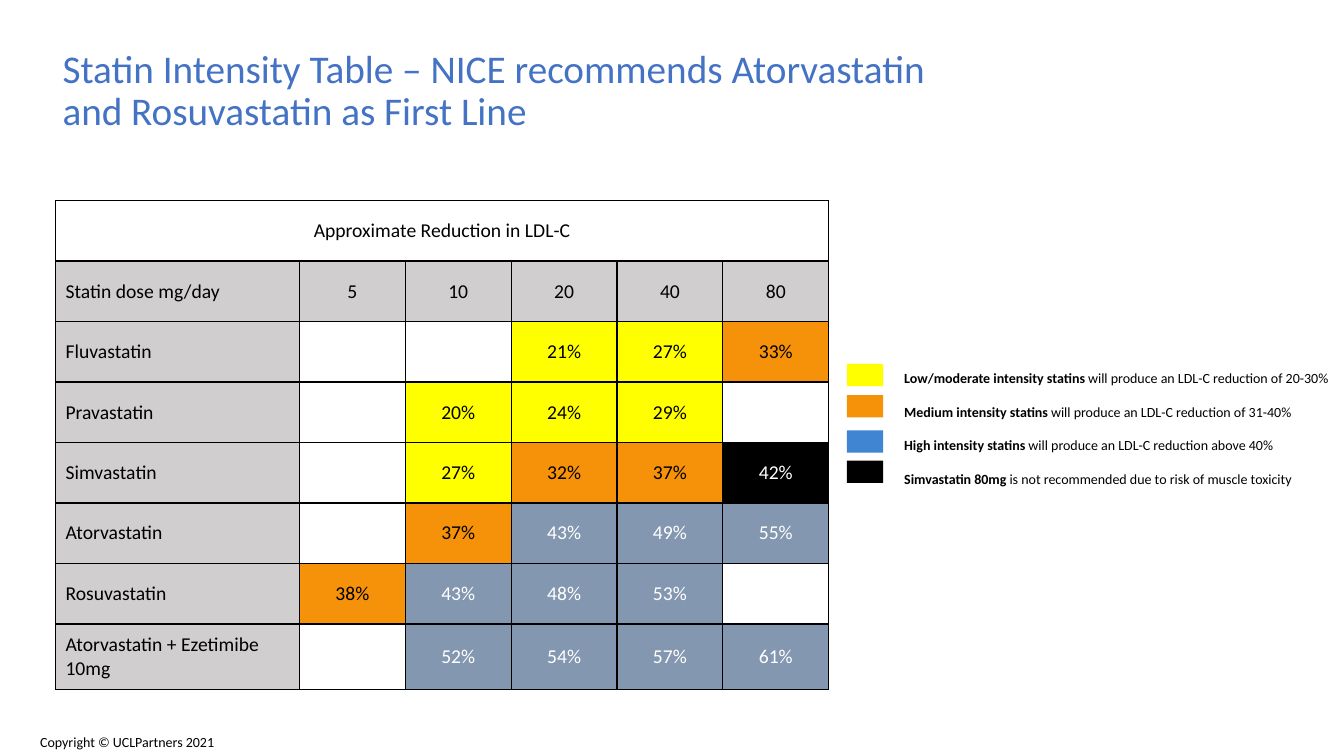
from lxml.etree import SubElement
from pptx import Presentation
from pptx.dml.color import RGBColor
from pptx.enum.shapes import MSO_SHAPE
from pptx.enum.text import MSO_ANCHOR as ANCHOR, MSO_AUTO_SIZE as AUTO, PP_ALIGN as ALIGN
from pptx.oxml import parse_xml
from pptx.oxml.ns import nsdecls
from pptx.util import Inches, Pt

BLACK = RGBColor(0x00, 0x00, 0x00)
WHITE = RGBColor(0xFF, 0xFF, 0xFF)
TITLE_BLUE = RGBColor(0x44, 0x72, 0xC4)
GREY = RGBColor(0xD0, 0xCE, 0xCE)
YELLOW = RGBColor(0xFF, 0xFF, 0x00)
ORANGE = RGBColor(0xF6, 0x91, 0x0A)
SLATE = RGBColor(0x84, 0x97, 0xB0)
KEY_BLUE = RGBColor(0x3F, 0x85, 0xD2)

DOSES = ["5", "10", "20", "40", "80"]
REDUCTIONS = {
    "Fluvastatin": [None, None, 21, 27, 33],
    "Pravastatin": [None, 20, 24, 29, None],
    "Simvastatin": [None, 27, 32, 37, 42],
    "Atorvastatin": [None, 37, 43, 49, 55],
    "Rosuvastatin": [38, 43, 48, 53, None],
    "Atorvastatin + Ezetimibe 10mg": [None, 52, 54, 57, 61],
}
KEY = [
    (3.61, YELLOW, "Low/moderate intensity statins ",
     "will produce an LDL-C reduction of 20-30%"),
    (3.92, ORANGE, "Medium intensity statins ",
     "will produce an LDL-C reduction of 31-40%"),
    (4.27, KEY_BLUE, "High intensity statins ",
     "will produce an LDL-C reduction above 40%"),
    (4.57, BLACK, "Simvastatin 80mg ",
     "is not recommended due to risk of muscle toxicity"),
]


def intensity_colours(statin, dose, value):
    if (statin, dose) == ("Simvastatin", "80"):
        return BLACK, WHITE
    if value <= 30:
        return YELLOW, BLACK
    if value <= 40:
        return ORANGE, BLACK
    return SLATE, WHITE


class SlideBuilder:
    """Holds the text style and the current slide, and adds elements to it."""

    def __init__(self, slide, font="Calibri"):
        self.slide = slide
        self.font = font

    def style(self, r, size, colour=BLACK, bold=False):
        r.font.name = self.font
        r.font.size = Pt(size)
        r.font.bold = bold
        r.font.color.rgb = colour

    def title(self, text, left, top, width, height):
        sp = self.slide.shapes.title
        sp.left, sp.top = Inches(left), Inches(top)
        sp.width, sp.height = Inches(width), Inches(height)
        tf = sp.text_frame
        tf.text = text
        tf.auto_size = AUTO.NONE
        tf.vertical_anchor = ANCHOR.MIDDLE
        p = tf.paragraphs[0]
        p.alignment = ALIGN.LEFT
        p.line_spacing = 0.9
        self.style(p.runs[0], 28, TITLE_BLUE)

    def text(self, paragraphs, left, top, width, height, wrap=True, spacing=1.0):
        sp = self.slide.shapes.add_textbox(
            Inches(left), Inches(top), Inches(width), Inches(height))
        tf = sp.text_frame
        tf.word_wrap = wrap
        for i, parts in enumerate(paragraphs):
            p = tf.add_paragraph() if i else tf.paragraphs[0]
            p.line_spacing = spacing
            for text, bold in parts:
                r = p.add_run()
                r.text = text
                self.style(r, 10, bold=bold)

    def swatch(self, colour, left, top, width, height):
        sp = self.slide.shapes.add_shape(
            MSO_SHAPE.RECTANGLE, Inches(left), Inches(top), Inches(width), Inches(height))
        sp.shadow.inherit = False
        sp.fill.solid()
        sp.fill.fore_color.rgb = colour
        sp.line.fill.background()

    def table(self, left, top, widths, heights):
        frame = self.slide.shapes.add_table(
            len(heights), len(widths), Inches(left), Inches(top),
            Inches(sum(widths)), Inches(sum(heights)))
        table = frame.table
        table.first_row = table.horz_banding = False
        for column, width in zip(table.columns, widths):
            column.width = Inches(width)
        for row, height in zip(table.rows, heights):
            row.height = Inches(height)
        for cell in table.iter_cells():
            self.borders(cell)
            cell.fill.background()
        return table

    def borders(self, cell):
        tc_pr = cell._tc.get_or_add_tcPr()
        for i, side in enumerate(("lnL", "lnR", "lnT", "lnB")):
            ln = parse_xml(f'<a:{side} {nsdecls("a")} w="{Pt(1)}"/>')
            fill = SubElement(ln, f"{{{ln.nsmap['a']}}}solidFill")
            SubElement(fill, f"{{{ln.nsmap['a']}}}srgbClr", val=str(BLACK))
            tc_pr.insert(i, ln)

    def cell(self, cell, text, fill=None, colour=BLACK, align=ALIGN.CENTER):
        if fill is not None:
            cell.fill.solid()
            cell.fill.fore_color.rgb = fill
        cell.vertical_anchor = ANCHOR.MIDDLE
        cell.text_frame.text = text
        p = cell.text_frame.paragraphs[0]
        p.alignment = align
        self.style(p.runs[0], 14, colour)


def main():
    prs = Presentation()
    prs.slide_width, prs.slide_height = Inches(13.33), Inches(7.5)
    s = SlideBuilder(prs.slides.add_slide(prs.slide_layouts[5]))

    s.text([[("Copyright © UCLPartners 2021", False)]], 0.3, 7.23, 1.96, 0.27, wrap=False)
    s.title("Statin Intensity Table – NICE recommends Atorvastatin "
            "and Rosuvastatin as First Line", 0.52, 0.46, 9.29, 0.9)

    table = s.table(0.55, 1.99, [2.42] + [1.05] * 5, [0.6] * 7 + [0.65])
    table.cell(0, 0).merge(table.cell(0, len(DOSES)))
    s.cell(table.cell(0, 0), "Approximate Reduction in LDL-C")
    s.cell(table.cell(1, 0), "Statin dose mg/day", GREY, align=ALIGN.LEFT)
    for col, dose in enumerate(DOSES, 1):
        s.cell(table.cell(1, col), dose, GREY)
    for row, (statin, values) in enumerate(REDUCTIONS.items(), 2):
        s.cell(table.cell(row, 0), statin, GREY, align=ALIGN.LEFT)
        for col, (dose, value) in enumerate(zip(DOSES, values), 1):
            if value is not None:
                fill, colour = intensity_colours(statin, dose, value)
                s.cell(table.cell(row, col), f"{value}%", fill, colour)

    s.text([[(name, True), (effect, False)] for _, _, name, effect in KEY],
           8.87, 3.45, 4.46, 2.75, spacing=2.0)
    for top, colour, _, _ in KEY:
        s.swatch(colour, 8.4, top, 0.36, 0.22)

    prs.save("out.pptx")


if __name__ == "__main__":
    main()
